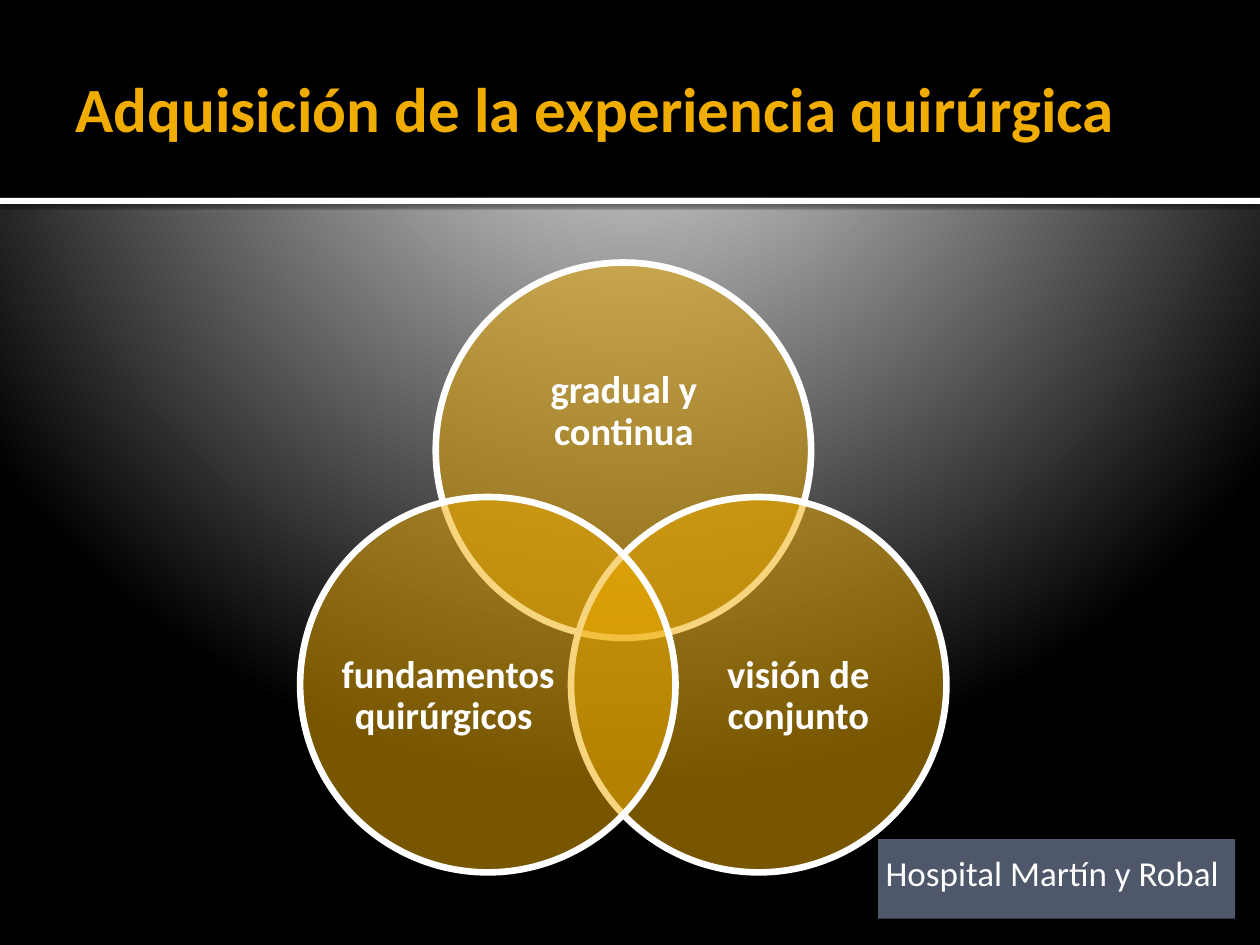
from dataclasses import dataclass

from lxml import etree
from pptx import Presentation
from pptx.dml.color import RGBColor
from pptx.enum.shapes import MSO_SHAPE
from pptx.enum.text import MSO_ANCHOR, PP_ALIGN
from pptx.oxml import parse_xml
from pptx.oxml.ns import nsdecls, qn
from pptx.util import Pt

RECTANGLE, OVAL = MSO_SHAPE.RECTANGLE, MSO_SHAPE.OVAL
TOP, MIDDLE = MSO_ANCHOR.TOP, MSO_ANCHOR.MIDDLE
LEFT, CENTER = PP_ALIGN.LEFT, PP_ALIGN.CENTER

FONT = "Calibri"
WHITE, BLACK, GOLD, SLATE = "FFFFFF", "000000", "F0AD00", "4F576A"
WIDTH, HEIGHT = 720, 540
HEADER_HEIGHT = 113
DIAMETER = 214.5
BACKGROUND_STOPS = [(0, "C0C0C0"), (12, "C0C0C0"), (20, "BEBEBE"), (100, "000000")]


@dataclass(frozen=True)
class Box:
    left: float
    top: float
    width: float
    height: float


@dataclass(frozen=True)
class VennCircle:
    text: str
    left: float
    top: float
    label: Box


CIRCLES = [
    VennCircle("gradual y continua", 249, 150, Box(278, 187.2, 157, 96.5)),
    VennCircle("visión de conjunto", 326.3, 284, Box(391.7, 339, 129, 118)),
    VennCircle("fundamentos quirúrgicos ", 171.5, 284, Box(191.5, 339, 129, 118)),
]


def color(value: str) -> RGBColor:
    return RGBColor.from_string(value)


def points(box: Box) -> tuple:
    return Pt(box.left), Pt(box.top), Pt(box.width), Pt(box.height)


def add_filled_shape(slide, kind, box: Box, fill: str):
    shape = slide.shapes.add_shape(kind, *points(box))
    shape.shadow.inherit = False
    shape.fill.solid()
    shape.fill.fore_color.rgb = color(fill)
    shape.line.fill.background()
    return shape


def write_text(shape, text: str, size: float, font_color: str, bold: bool,
               alignment, anchor, insets: tuple):
    frame = shape.text_frame
    frame.word_wrap = True
    frame.vertical_anchor = anchor
    (frame.margin_left, frame.margin_top,
     frame.margin_right, frame.margin_bottom) = map(Pt, insets)
    paragraph = frame.paragraphs[0]
    paragraph.text = text
    paragraph.alignment = alignment
    font = paragraph.font
    font.name, font.size, font.bold = FONT, Pt(size), bold
    font.color.rgb = color(font_color)
    return paragraph


def set_background(slide) -> None:
    fill = slide.background.fill
    fill.solid()
    stops = "".join(
        f'<a:gs pos="{position * 1000}"><a:srgbClr val="{value}"/></a:gs>'
        for position, value in BACKGROUND_STOPS
    )
    gradient = parse_xml(
        f'<a:gradFill {nsdecls("a")} rotWithShape="1"><a:gsLst>{stops}</a:gsLst>'
        '<a:path path="circle"><a:fillToRect l="10000" t="-25000" r="10000" b="125000"/>'
        "</a:path></a:gradFill>"
    )
    solid = next(slide.element.iter(qn("a:solidFill")))
    solid.getparent().replace(solid, gradient)


def add_header(slide) -> None:
    stripe = add_filled_shape(slide, RECTANGLE, Box(0, HEADER_HEIGHT, WIDTH, 3.6), WHITE)
    effects = stripe.element.spPr.find(qn("a:effectLst"))
    shadow = etree.SubElement(
        effects, qn("a:outerShdw"), blurRad=str(Pt(2.5)), dist=str(Pt(0.8)),
        dir="5400000", rotWithShape="0")
    shadow_color = etree.SubElement(shadow, qn("a:srgbClr"), val=BLACK)
    etree.SubElement(shadow_color, qn("a:alpha"), val="60000")
    add_filled_shape(slide, RECTANGLE, Box(0, 0, WIDTH, HEADER_HEIGHT), BLACK)

    title = slide.shapes.title
    title.left, title.top, title.width, title.height = points(Box(36, 12.2, 648, 98.6))
    write_text(title, "Adquisición de la experiencia quirúrgica", 36, GOLD, True,
               LEFT, MIDDLE, (7.2, 3.6, 3.6, 3.6))
    title.element.getparent().append(title.element)


def add_venn_circle(slide, circle: VennCircle) -> None:
    oval = add_filled_shape(
        slide, OVAL, Box(circle.left, circle.top, DIAMETER, DIAMETER), GOLD)
    fill_color = oval.element.spPr.find(qn("a:solidFill"))[0]
    etree.SubElement(fill_color, qn("a:alpha"), val="50000")
    oval.line.color.rgb = color(WHITE)
    oval.line.width = Pt(3.78)

    label = slide.shapes.add_textbox(*points(circle.label))
    paragraph = write_text(label, circle.text, 22, WHITE, True, CENTER, MIDDLE, (0, 0, 0, 0))
    paragraph.line_spacing = 0.9


def main() -> None:
    presentation = Presentation()
    presentation.slide_width, presentation.slide_height = Pt(WIDTH), Pt(HEIGHT)
    slide = presentation.slides.add_slide(presentation.slide_layouts.get_by_name("Title Only"))
    set_background(slide)
    add_header(slide)
    for circle in CIRCLES:
        add_venn_circle(slide, circle)
    hospital = add_filled_shape(slide, RECTANGLE, Box(501.8, 479.6, 204, 45.4), SLATE)
    write_text(hospital, "Hospital Martín y Robal", 20, WHITE, False,
               LEFT, TOP, (4.3, 7.2, 7.2, 3.6))
    presentation.save("out.pptx")


if __name__ == "__main__":
    main()
